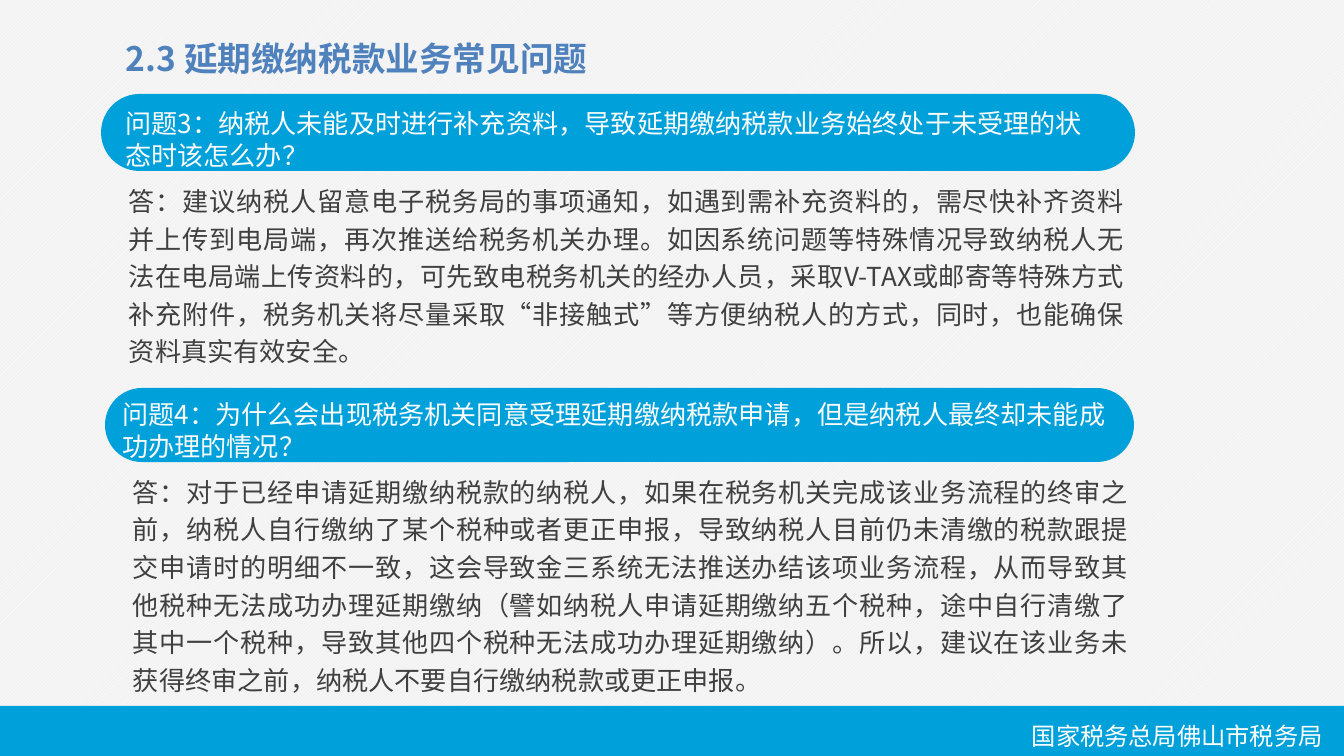
from pptx import Presentation
from pptx.dml.color import RGBColor
from pptx.enum.dml import MSO_PATTERN
from pptx.enum.shapes import MSO_SHAPE
from pptx.enum.text import MSO_ANCHOR, MSO_AUTO_SIZE, PP_ALIGN
from pptx.oxml.ns import qn
from pptx.util import Emu, Pt
from lxml import etree

RECTANGLE = MSO_SHAPE.RECTANGLE
PILL = MSO_SHAPE.ROUNDED_RECTANGLE
TOP = MSO_ANCHOR.TOP
MIDDLE = MSO_ANCHOR.MIDDLE
LEFT = PP_ALIGN.LEFT
JUSTIFY = PP_ALIGN.JUSTIFY
GROW = MSO_AUTO_SIZE.SHAPE_TO_FIT_TEXT
FIXED = MSO_AUTO_SIZE.NONE
DIAGONAL = MSO_PATTERN.LIGHT_UPWARD_DIAGONAL

WHITE = RGBColor(0xFF, 0xFF, 0xFF)
OFF_WHITE = RGBColor(0xFC, 0xFC, 0xFC)
PALE_GRAY = RGBColor(0xF2, 0xF2, 0xF2)
DARK_GRAY = RGBColor(0x40, 0x40, 0x40)
CYAN = RGBColor(0x00, 0xA1, 0xDA)
TITLE_BLUE = RGBColor(0x4F, 0x81, 0xBD)

FONT = "Noto Sans CJK SC"
EMU_PER_PX = 914400 / 134.4

TOPICS = [
    {
        "pill": (101, 94, 1034, 77),
        "question_area": (112, 116, 991, 46),
        "question": "问题3：纳税人未能及时进行补充资料，导致延期缴纳税款业务始终处于未受理的状态时该怎么办？",
        "answer_area": (129, 179, 995, 190),
        "answer": "答：建议纳税人留意电子税务局的事项通知，如遇到需补充资料的，需尽快补齐资料"
                  "并上传到电局端，再次推送给税务机关办理。如因系统问题等特殊情况导致纳税人无"
                  "法在电局端上传资料的，可先致电税务机关的经办人员，采取V-TAX或邮寄等特殊方"
                  "式补充附件，税务机关将尽量采取“非接触式”等方便纳税人的方式，同时，也能确"
                  "保资料真实有效安全。",
    },
    {
        "pill": (105, 388, 1029, 74),
        "question_area": (109, 399, 1025, 62),
        "question": "问题4：为什么会出现税务机关同意受理延期缴纳税款申请，但是纳税人最终却未能成功办理的情况？",
        "answer_area": (133, 470, 995, 224),
        "answer": "答：对于已经申请延期缴纳税款的纳税人，如果在税务机关完成该业务流程的终审之"
                  "前，纳税人自行缴纳了某个税种或者更正申报，导致纳税人目前仍未清缴的税款跟提"
                  "交申请时的明细不一致，这会导致金三系统无法推送办结该项业务流程，从而导致其"
                  "他税种无法成功办理延期缴纳（譬如纳税人申请延期缴纳五个税种，途中自行清缴了"
                  "其中一个税种，导致其他四个税种无法成功办理延期缴纳）。所以，建议在该业务未"
                  "获得终审之前，纳税人不要自行缴纳税款或更正申报。",
    },
]


def px(length):
    return Emu(round(length * EMU_PER_PX))


def set_background(page):
    fill = page.background.fill
    fill.patterned()
    fill.pattern = DIAGONAL
    fill.fore_color.rgb = WHITE
    fill.back_color.rgb = PALE_GRAY


def add_band(page, kind, area):
    band = page.shapes.add_shape(kind, *map(px, area))
    band.shadow.inherit = False
    band.fill.solid()
    band.fill.fore_color.rgb = CYAN
    band.line.fill.background()
    if kind == PILL:
        band.adjustments[0] = 0.5


def add_text(page, text, area, size=14, color=DARK_GRAY, bold=False, align=LEFT,
             anchor=TOP, inset=(13, 7), spacing=1.0, fit=FIXED):
    box = page.shapes.add_textbox(*map(px, area))
    frame = box.text_frame
    frame.word_wrap = True
    frame.auto_size = fit
    frame.vertical_anchor = anchor
    frame.margin_left = frame.margin_right = px(inset[0])
    frame.margin_top = frame.margin_bottom = px(inset[1])
    para = frame.paragraphs[0]
    para.alignment = align
    para.line_spacing = spacing
    span = para.add_run()
    span.text = text
    span.font.size = Pt(size)
    span.font.bold = bold
    span.font.color.rgb = color
    span.font.name = FONT
    etree.SubElement(span.font._element, qn("a:ea"), typeface=FONT)


def add_topic(page, topic):
    add_band(page, PILL, topic["pill"])
    add_text(page, topic["answer"], topic["answer_area"], align=JUSTIFY,
             inset=(0, 0), spacing=1.2, fit=GROW)
    add_text(page, topic["question"], topic["question_area"], color=OFF_WHITE,
             anchor=MIDDLE)


def main():
    deck = Presentation()
    deck.slide_width = px(1344)
    deck.slide_height = px(756)
    page = deck.slides.add_slide(deck.slide_layouts[6])
    set_background(page)
    add_band(page, RECTANGLE, (-4, 706, 1353, 52))
    add_text(page, "国家税务总局佛山市税务局", (1019, 714, 336, 43), size=13,
             color=WHITE, fit=GROW)
    for topic in TOPICS:
        add_topic(page, topic)
    add_text(page, "2.3 延期缴纳税款业务常见问题", (126, 30, 524, 56), size=18,
             color=TITLE_BLUE, bold=True, anchor=MIDDLE, inset=(0, 7))
    deck.save("out.pptx")


if __name__ == "__main__":
    main()
